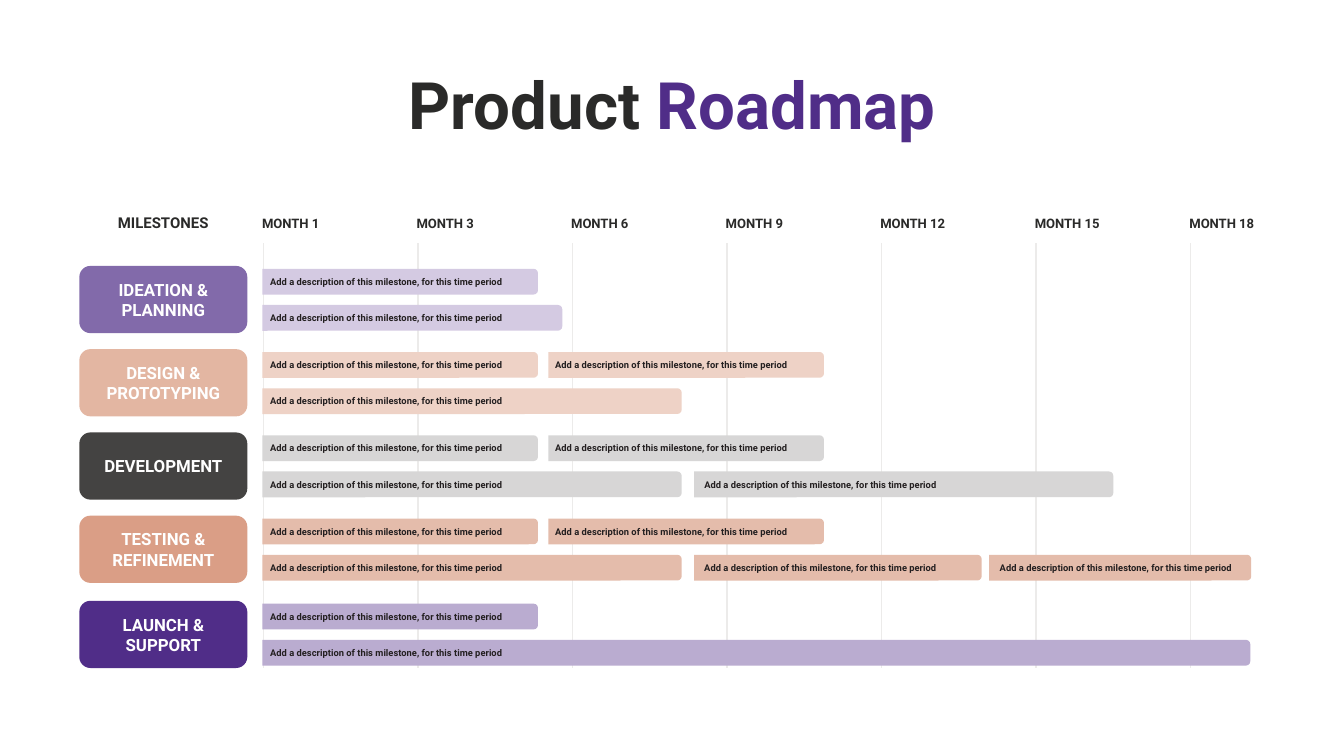
from lxml.etree import SubElement
from pptx import Presentation
from pptx.dml.color import RGBColor
from pptx.enum.shapes import MSO_CONNECTOR, MSO_SHAPE
from pptx.enum.text import MSO_ANCHOR as Anchor, MSO_AUTO_SIZE, PP_ALIGN as Align
from pptx.oxml.ns import qn
from pptx.util import Pt

FONT = "Roboto"
INK, WHITE, PURPLE, GRID, BAR_INK = "2A2A29", "FFFFFF", "502D88", "ECEBEA", "231F20"
TITLE = [("Product ", INK), ("Roadmap", PURPLE)]
MONTHS = [1, 3, 6, 9, 12, 15, 18]
DESCRIPTION = "Add a description of this milestone, for this time period"

BAR_STARTS = {"first": (140.6, 4.1), "second": (293.8, 3.6),
              "middle": (371.8, 5.5), "late": (529.9, 5.7)}
SHORT, LONG = 147.6, 224.6

PHASES = [
    (["IDEATION &", "PLANNING"], 142.5, "826AAA", "D4CAE2",
     [[("first", SHORT)], [("first", 160.6)]]),
    (["DESIGN &", "PROTOTYPING"], 187.1, "E3B6A2", "EED2C6",
     [[("first", SHORT), ("second", SHORT)], [("first", LONG)]]),
    (["DEVELOPMENT"], 231.7, "444342", "D7D6D6",
     [[("first", SHORT), ("second", SHORT)], [("first", LONG), ("middle", LONG)]]),
    (["TESTING &", "REFINEMENT"], 276.3, "DA9E86", "E4BCAB",
     [[("first", SHORT), ("second", SHORT)],
      [("first", LONG), ("middle", 154.1), ("late", 140.4)]]),
    (["LAUNCH &", "SUPPORT"], 321.9, PURPLE, "BAACD0",
     [[("first", SHORT)], [("first", 529.2)]]),
]

CARD_LEFT, CARD_WIDTH, CARD_HEIGHT = 42.5, 90, 36
BAR_HEIGHT, BAR_OFFSET, BAR_PITCH = 13.8, 8.4, 19.4
GRID_LEFT, GRID_TOP, GRID_BOTTOM, GRID_PITCH = 141.1, 130.3, 357.8, 82.8


def colour(hex_string):
    return RGBColor.from_string(hex_string)


def write(shape, paragraphs, size, align=Align.LEFT, anchor=Anchor.TOP, spacing=None, wrap=True):
    frame = shape.text_frame
    frame.auto_size = MSO_AUTO_SIZE.NONE
    frame.word_wrap = wrap
    frame.vertical_anchor = anchor
    frame.margin_left = frame.margin_right = frame.margin_top = frame.margin_bottom = 0
    for index, runs in enumerate(paragraphs):
        paragraph = frame.add_paragraph() if index else frame.paragraphs[0]
        paragraph.alignment = align
        paragraph.space_before = Pt(0)
        if spacing:
            paragraph.line_spacing = spacing
        for text, ink in runs:
            run = paragraph.add_run()
            run.text = text
            run.font.name = FONT
            run.font.size = Pt(size)
            run.font.bold = True
            run.font.color.rgb = colour(ink)


def add_label(left, top, width, height, text, ink, size, **style):
    box = slide.shapes.add_textbox(Pt(left), Pt(top), Pt(width), Pt(height))
    write(box, [[(text, ink)]], size, **style)


def add_block(kind, left, top, width, height, fill, corners):
    block = slide.shapes.add_shape(kind, Pt(left), Pt(top), Pt(width), Pt(height))
    for index, corner in enumerate(corners):
        block.adjustments[index] = corner
    block.shadow.inherit = False
    block.fill.solid()
    block.fill.fore_color.rgb = colour(fill)
    block.line.fill.background()
    return block


def add_gridline(x):
    line = slide.shapes.add_connector(
        MSO_CONNECTOR.STRAIGHT, Pt(x), Pt(GRID_TOP), Pt(x), Pt(GRID_BOTTOM))
    line.line.color.rgb = colour(GRID)
    line.line.width = Pt(0.75)
    SubElement(line._element.spPr, qn("a:effectLst"))


def add_bar(start, width, middle, fill):
    left, indent = BAR_STARTS[start]
    bar = add_block(MSO_SHAPE.ROUND_2_SAME_RECTANGLE,
                    left + (width - BAR_HEIGHT) / 2, middle - width / 2,
                    BAR_HEIGHT, width, fill, [0.167, 0])
    bar.rotation = 90
    add_label(left + indent, middle - BAR_HEIGHT / 2, width - indent, BAR_HEIGHT,
              DESCRIPTION, BAR_INK, 5, anchor=Anchor.MIDDLE, wrap=False)


deck = Presentation()
deck.slide_width, deck.slide_height = Pt(720), Pt(405)
slide = deck.slides.add_slide(deck.slide_layouts[5])

title = slide.shapes.title
title.left, title.top, title.width, title.height = Pt(51), Pt(38.9), Pt(618.5), Pt(38)
write(title, [TITLE], 35, align=Align.CENTER, spacing=0.9)

add_label(58.3, 112.3, 58.3, 9.4, "MILESTONES", INK, 8, align=Align.CENTER, spacing=1.2)
for column, month in enumerate(MONTHS):
    x = GRID_LEFT + column * GRID_PITCH
    add_gridline(x)
    add_label(x - 0.7, 113.8, 54.7, 8.6, f"MONTH {month}", INK, 7, spacing=1.2)

for name, top, card_fill, bar_fill, rows in PHASES:
    card = add_block(MSO_SHAPE.ROUNDED_RECTANGLE, CARD_LEFT, top, CARD_WIDTH, CARD_HEIGHT,
                     card_fill, [0.166])
    write(card, [[(line, WHITE)] for line in name], 9, align=Align.CENTER, anchor=Anchor.MIDDLE)
    for row, bars in enumerate(rows):
        for start, width in bars:
            add_bar(start, width, top + BAR_OFFSET + row * BAR_PITCH, bar_fill)

deck.save("out.pptx")
